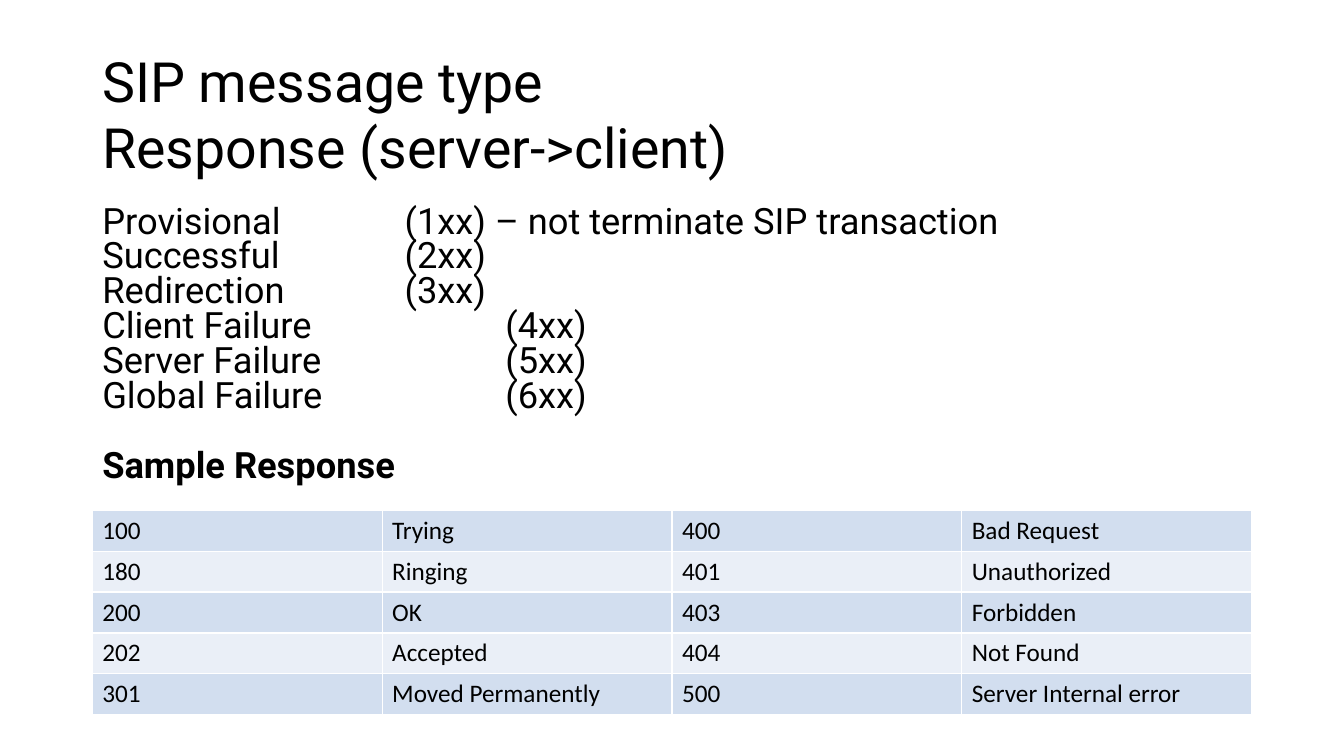
from lxml.etree import SubElement
from pptx import Presentation
from pptx.dml.color import RGBColor
from pptx.enum.text import MSO_ANCHOR
from pptx.oxml.ns import qn
from pptx.util import Pt


def rgb(value):
    return RGBColor.from_string(value)


class Deck:
    HEADING_FONT = "Roboto"
    TABLE_FONT = "Calibri"
    INK = "000000"
    BORDER = "FFFFFF"
    BANDS = ("D2DEEF", "EAEFF7")

    def __init__(self, prs):
        self.slide = prs.slides.add_slide(prs.slide_layouts[6])

    def style(self, p, font, size, bold=False):
        p.font.name = font
        p.font.size = Pt(size)
        p.font.bold = bold
        p.font.color.rgb = rgb(self.INK)

    def text_box(self, x, y, w, h, anchor=MSO_ANCHOR.TOP):
        tf = self.slide.shapes.add_textbox(Pt(x), Pt(y), Pt(w), Pt(h)).text_frame
        tf.word_wrap = True
        tf.vertical_anchor = anchor
        return tf

    def title(self, x, y, w, h, text):
        p = self.text_box(x, y, w, h, MSO_ANCHOR.MIDDLE).paragraphs[0]
        p.text = text
        self.style(p, self.HEADING_FONT, 39.6)

    def body(self, x, y, w, h, entries, heading):
        tf = self.text_box(x, y, w, h)
        for i, (label, code, tab) in enumerate(entries):
            p = tf.paragraphs[0] if i == 0 else tf.add_paragraph()
            p.text = f"{label}\t{code}"
            p.line_spacing = 0.8
            tabs = SubElement(p._p.get_or_add_pPr(), qn("a:tabLst"))
            SubElement(tabs, qn("a:tab"), pos=str(Pt(tab)), algn="l")
            self.style(p, self.HEADING_FONT, 25.9)
        p = tf.add_paragraph()
        p.text = heading
        p.line_spacing = 0.8
        p.space_before = Pt(25)
        self.style(p, self.HEADING_FONT, 25.9, bold=True)

    def border(self, cell):
        tcPr = cell._tc.get_or_add_tcPr()
        for side in ("a:lnL", "a:lnR", "a:lnT", "a:lnB"):
            ln = SubElement(tcPr, qn(side), w=str(Pt(1)))
            fill = SubElement(ln, qn("a:solidFill"))
            SubElement(fill, qn("a:srgbClr"), val=self.BORDER)

    def table(self, x, y, w, row_h, rows):
        table = self.slide.shapes.add_table(
            len(rows), len(rows[0]), Pt(x), Pt(y), Pt(w), Pt(row_h * len(rows))
        ).table
        table.first_row = False
        for i, values in enumerate(rows):
            table.rows[i].height = Pt(row_h)
            for j, value in enumerate(values):
                cell = table.cell(i, j)
                self.border(cell)
                cell.fill.solid()
                cell.fill.fore_color.rgb = rgb(self.BANDS[i % 2])
                p = cell.text_frame.paragraphs[0]
                p.text = value
                self.style(p, self.TABLE_FONT, 18)


def main():
    prs = Presentation()
    prs.slide_width, prs.slide_height = Pt(960), Pt(540)
    s = Deck(prs)
    left, width = 66, 828

    s.title(left, 28.75, width, 104.4, "SIP message type\vResponse (server->client)")
    s.body(left, 143.75, width, 342.7, [
        ("Provisional", "(1xx) – not terminate SIP transaction", 216),
        ("Successful", "(2xx)", 216),
        ("Redirection", "(3xx)", 216),
        ("Client Failure", "(4xx)", 288),
        ("Server Failure", "(5xx)", 288),
        ("Global Failure", "(6xx)", 288),
    ], "Sample Response")
    s.table(left, 364.5, width, 29.2, [
        ("100", "Trying", "400", "Bad Request"),
        ("180", "Ringing", "401", "Unauthorized"),
        ("200", "OK", "403", "Forbidden"),
        ("202", "Accepted", "404", "Not Found"),
        ("301", "Moved Permanently", "500", "Server Internal error"),
    ])
    prs.save("out.pptx")


if __name__ == "__main__":
    main()
